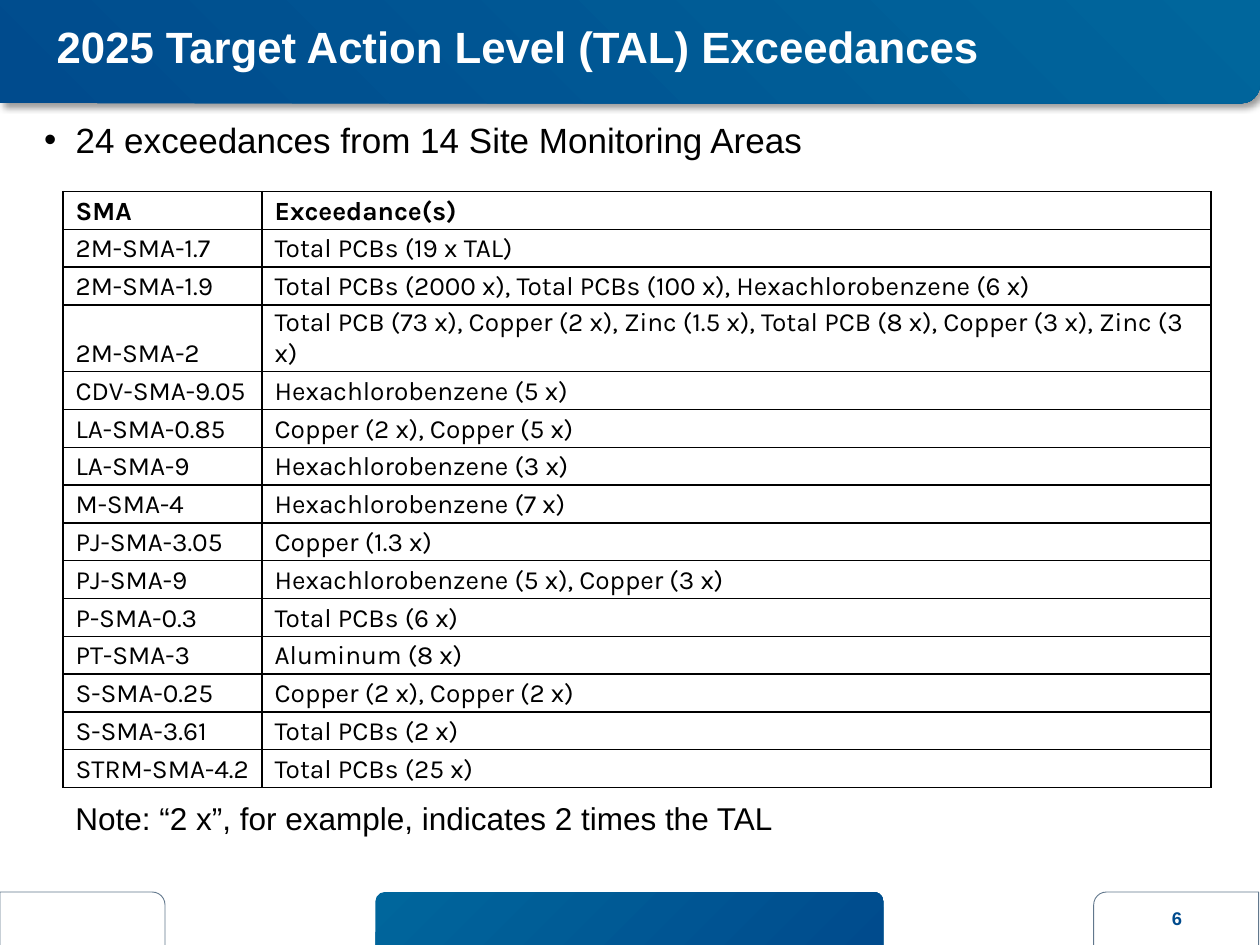
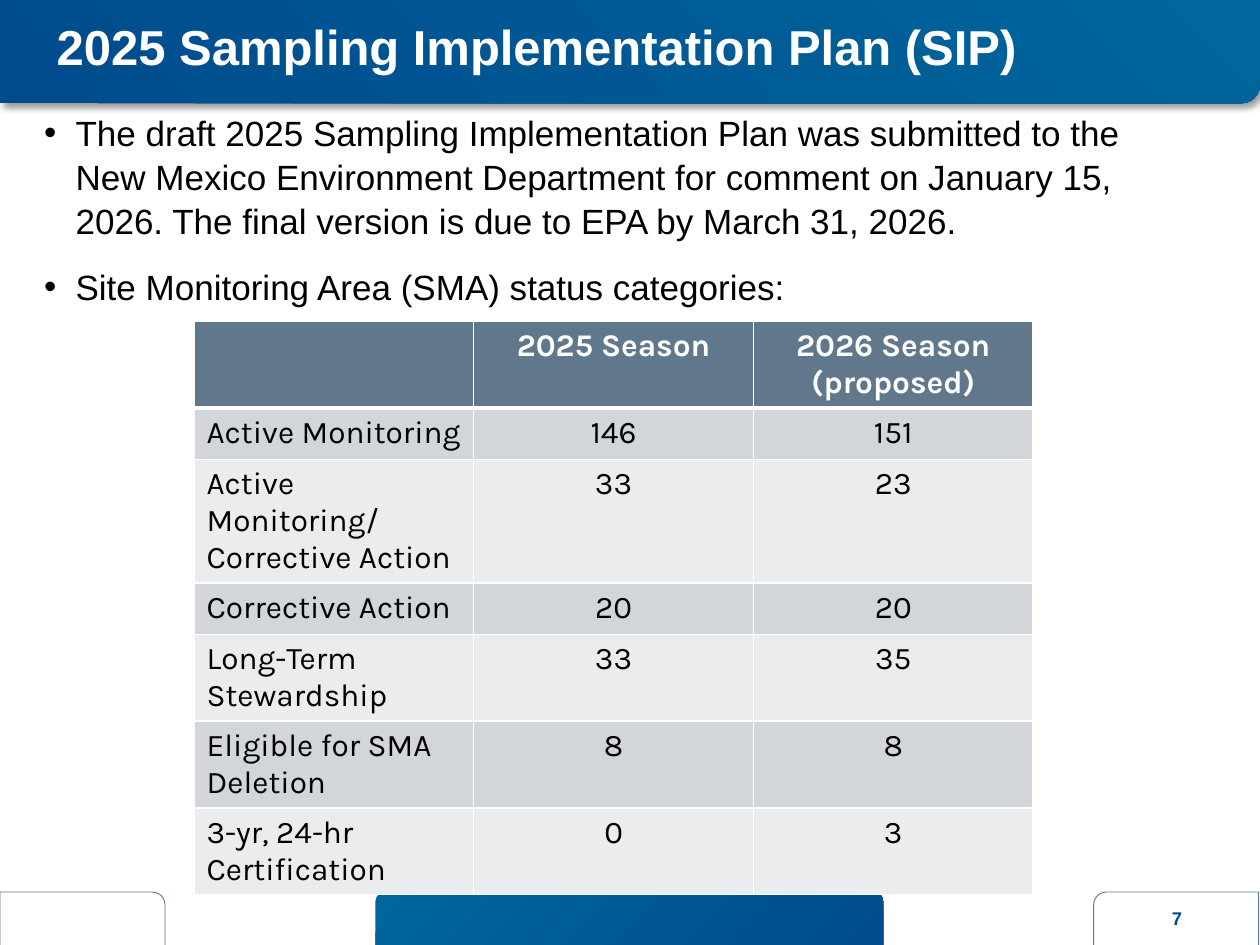
from lxml import etree
from pptx import Presentation
from pptx.dml.color import RGBColor
from pptx.enum.shapes import MSO_SHAPE as Shape
from pptx.enum.text import MSO_ANCHOR as Anchor, MSO_AUTO_SIZE as Fit, PP_ALIGN as Align
from pptx.oxml.ns import qn
from pptx.util import Inches, Pt

NAVY = RGBColor(0x00, 0x4B, 0x8D)
TEAL = RGBColor(0x00, 0x66, 0x9C)
SLATE = RGBColor(0x61, 0x77, 0x8C)
MIST = RGBColor(0xD2, 0xD6, 0xDA)
PALE = RGBColor(0xEA, 0xEC, 0xEE)
WHITE = RGBColor(0xFF, 0xFF, 0xFF)
BLACK = RGBColor(0x00, 0x00, 0x00)

FIRST_PAGE = 6
TAB_BOX = (1.31, 0.44)
FOOT_TOP = 7.08

LIMITS = [
    ("SMA", "Exceedance(s)"),
    ("2M-SMA-1.7", "Total PCBs (19 x TAL)"),
    ("2M-SMA-1.9", "Total PCBs (2000 x), Total PCBs (100 x), Hexachlorobenzene (6 x)"),
    ("2M-SMA-2", "Total PCB (73 x), Copper (2 x), Zinc (1.5 x), "
                 "Total PCB (8 x), Copper (3 x), Zinc (3 x)"),
    ("CDV-SMA-9.05", "Hexachlorobenzene (5 x)"),
    ("LA-SMA-0.85", "Copper (2 x), Copper (5 x)"),
    ("LA-SMA-9", "Hexachlorobenzene (3 x)"),
    ("M-SMA-4", "Hexachlorobenzene (7 x)"),
    ("PJ-SMA-3.05", "Copper (1.3 x)"),
    ("PJ-SMA-9", "Hexachlorobenzene (5 x), Copper (3 x)"),
    ("P-SMA-0.3", "Total PCBs (6 x)"),
    ("PT-SMA-3", "Aluminum (8 x)"),
    ("S-SMA-0.25", "Copper (2 x), Copper (2 x)"),
    ("S-SMA-3.61", "Total PCBs (2 x)"),
    ("STRM-SMA-4.2", "Total PCBs (25 x)"),
]

STATUS = [
    ("", "2025 Season", "2026 Season (proposed)"),
    ("Active Monitoring", "146", "151"),
    ("Active Monitoring/ Corrective Action", "33", "23"),
    ("Corrective Action", "20", "20"),
    ("Long-Term Stewardship", "33", "35"),
    ("Eligible for SMA Deletion", "8", "8"),
    ("3-yr, 24-hr Certification", "0", "3"),
]


def write(frame, *lines, size=20, font="Arial", color=BLACK, bold=False,
          align=Align.LEFT, gap=0, pitch=1.0, bullet=False):
    """Fill a text frame, one paragraph a line, with gap points between them."""
    for i, line in enumerate(lines):
        para = frame.add_paragraph() if i else frame.paragraphs[0]
        if bullet:
            add_bullet(para)
        para.alignment = align
        para.space_before = Pt(gap if i else 0)
        para.line_spacing = pitch
        if line:
            run = para.add_run()
            run.text = line
            style = run.font
        else:
            style = para.font
        style.name, style.size, style.bold = font, Pt(size), bold
        style.color.rgb = color


def add_bullet(para):
    props = para._p.get_or_add_pPr()
    props.set("marL", str(Inches(0.25)))
    props.set("indent", str(-Inches(0.25)))
    etree.SubElement(props, qn("a:buFont"), typeface="Arial")
    etree.SubElement(props, qn("a:buChar"), char="•")


def pad(frame, left, top, right, bottom):
    frame.margin_left, frame.margin_top = Inches(left), Inches(top)
    frame.margin_right, frame.margin_bottom = Inches(right), Inches(bottom)


def place(holder, box, pads):
    """Move a placeholder to the front and to its box; return its frame."""
    holder.left, holder.top, holder.width, holder.height = map(Inches, box)
    tree = holder._element.getparent()
    tree.append(holder._element)
    frame = holder.text_frame
    frame.word_wrap, frame.auto_size = True, Fit.NONE
    pad(frame, *pads)
    return frame


def add_label(slide, box, pads):
    frame = slide.shapes.add_textbox(*map(Inches, box)).text_frame
    frame.word_wrap = True
    pad(frame, *pads)
    return frame


def add_panel(slide, kind, box, colors, adjust=None, flip=None):
    """Draw a shape: one colour gives an outlined fill, two a gradient."""
    panel = slide.shapes.add_shape(kind, *map(Inches, box))
    panel.shadow.inherit = False
    if adjust:
        panel.adjustments[0] = adjust
    if flip:
        panel._element.spPr.find(qn("a:xfrm")).set(flip, "1")
    if len(colors) == 1:
        panel.fill.solid()
        panel.fill.fore_color.rgb = colors[0]
        panel.line.color.rgb = SLATE
        panel.line.width = Pt(0.5)
    else:
        panel.fill.gradient()
        panel.fill.gradient_angle = 315
        for stop, color in zip(panel.fill.gradient_stops, colors):
            stop.color.rgb = color
        panel.line.fill.background()
    return panel


def add_shadow(panel):
    effects = panel._element.spPr.find(qn("a:effectLst"))
    outer = etree.SubElement(effects, qn("a:outerShdw"), blurRad=str(Pt(4)),
                             dist=str(Pt(3)), dir="2700000", rotWithShape="0")
    color = etree.SubElement(outer, qn("a:srgbClr"), val=str(BLACK))
    etree.SubElement(color, qn("a:alpha"), val="40000")


def add_page(slide, number):
    frame = add_label(slide, (9.18, 7.07, 0.32, 0.44), (0, 0, 0, 0))
    frame.vertical_anchor = Anchor.MIDDLE
    write(frame, str(number), size=10.5, color=NAVY, bold=True, align=Align.CENTER)
    field = frame.paragraphs[0].runs[0]._r
    field.tag = qn("a:fld")
    field.set("id", "{B6F15528-21DE-4FAA-801E-634DDDAF4B2B}")
    field.set("type", "slidenum")


def add_slide(deck, title, size, inset):
    """Start a slide with its band, footer and title."""
    slide = deck.slides.add_slide(deck.slide_layouts[1])
    for left, flip in ((8.68, "flipH"), (0, None)):
        add_panel(slide, Shape.ROUND_1_RECTANGLE, (left, FOOT_TOP, *TAB_BOX),
                  [WHITE], 0.23, flip)
    add_panel(slide, Shape.ROUND_2_SAME_RECTANGLE, (2.98, FOOT_TOP, 4.03, 0.44),
              [TEAL, NAVY])
    band = add_panel(slide, Shape.ROUND_1_RECTANGLE, (0, 0, 10, 0.82),
                     [NAVY, TEAL], 0.18, "flipV")
    add_shadow(band)
    add_page(slide, FIRST_PAGE + len(deck.slides) - 1)
    frame = place(slide.shapes.title, (0.25, 0.08, 9.22, 0.57),
                  (0.2, inset, 0.1, inset))
    frame.vertical_anchor = Anchor.MIDDLE
    write(frame, title, size=size, color=WHITE, bold=True)
    return slide


def add_list(slide, *lines, height, inset):
    frame = place(slide.placeholders[1], (0.25, 0.82, 9.25, height),
                  (0.1, inset, 0.1, inset))
    write(frame, *lines, gap=12, pitch=1.05, bullet=True)


def set_edges(cell, color, top=1, bottom=1):
    props = cell._tc.get_or_add_tcPr()
    for i, (side, width) in enumerate(zip("LRTB", (1, 1, top, bottom))):
        edge = etree.Element(qn(f"a:ln{side}"), w=str(Pt(width)))
        fill = etree.SubElement(edge, qn("a:solidFill"))
        etree.SubElement(fill, qn("a:srgbClr"), val=str(color))
        props.insert(i, edge)


def add_grid(slide, rows, spot, cols, heights, head, bands, edge, size,
             head_ink=BLACK, rule=1, pads=(0.1, 0.05, 0.1, 0.05),
             anchor=Anchor.TOP, align=Align.LEFT):
    """Add a table; align applies to the columns after the first."""
    box = (*spot, sum(cols), sum(heights))
    table = slide.shapes.add_table(len(rows), len(cols), *map(Inches, box)).table
    table.horz_banding = False
    for col, width in zip(table.columns, cols):
        col.width = Inches(width)
    for r, (row, height) in enumerate(zip(rows, heights)):
        table.rows[r].height = Inches(height)
        for c, text in enumerate(row):
            cell = table.cell(r, c)
            pad(cell, *pads)
            cell.vertical_anchor = anchor
            cell.fill.solid()
            cell.fill.fore_color.rgb = bands[(r - 1) % len(bands)] if r else head
            set_edges(cell, edge, rule if r == 1 else 1, 1 if r else rule)
            write(cell.text_frame, text, size=size, font="Karla", bold=r == 0,
                  color=BLACK if r else head_ink,
                  align=align if c else Align.LEFT)


def add_limits(deck):
    slide = add_slide(deck, "2025 Target Action Level (TAL) Exceedances", 25, 0.1)
    add_list(slide, "24 exceedances from 14 Site Monitoring Areas",
             height=0.57, inset=0.1)
    add_grid(slide, LIMITS, (0.5, 1.52), (1.58, 7.53), [0.3] * len(LIMITS),
             WHITE, [WHITE], BLACK, 15, pads=(0.1, 0.02, 0.01, 0.02),
             anchor=Anchor.BOTTOM)
    note = add_label(slide, (0.5, 6.23, 9.25, 0.57), (0.1, 0.1, 0.1, 0.1))
    write(note, "Note: “2 x”, for example, indicates 2 times the TAL",
          size=18, pitch=1.05)


def add_plan(deck):
    slide = add_slide(deck, "2025 Sampling Implementation Plan (SIP)", 28, 0.05)
    add_list(slide,
             "The draft 2025 Sampling Implementation Plan was submitted to the "
             "New Mexico Environment Department for comment on January 15, 2026. "
             "The final version is due to EPA by March 31, 2026.",
             "Site Monitoring Area (SMA) status categories:",
             height=6.04, inset=0.05)
    heights = [0.76 if r == 2 else 0.41 for r in range(len(STATUS))]
    add_grid(slide, STATUS, (1.54, 2.55), [2.22] * 3, heights, SLATE,
             [MIST, PALE], WHITE, 18, head_ink=WHITE, rule=3, align=Align.CENTER)


def main():
    deck = Presentation()
    deck.slide_width, deck.slide_height = Inches(10), Inches(7.5)
    deck.element.set("firstSlideNum", str(FIRST_PAGE))
    add_limits(deck)
    add_plan(deck)
    deck.save("out.pptx")


if __name__ == "__main__":
    main()
